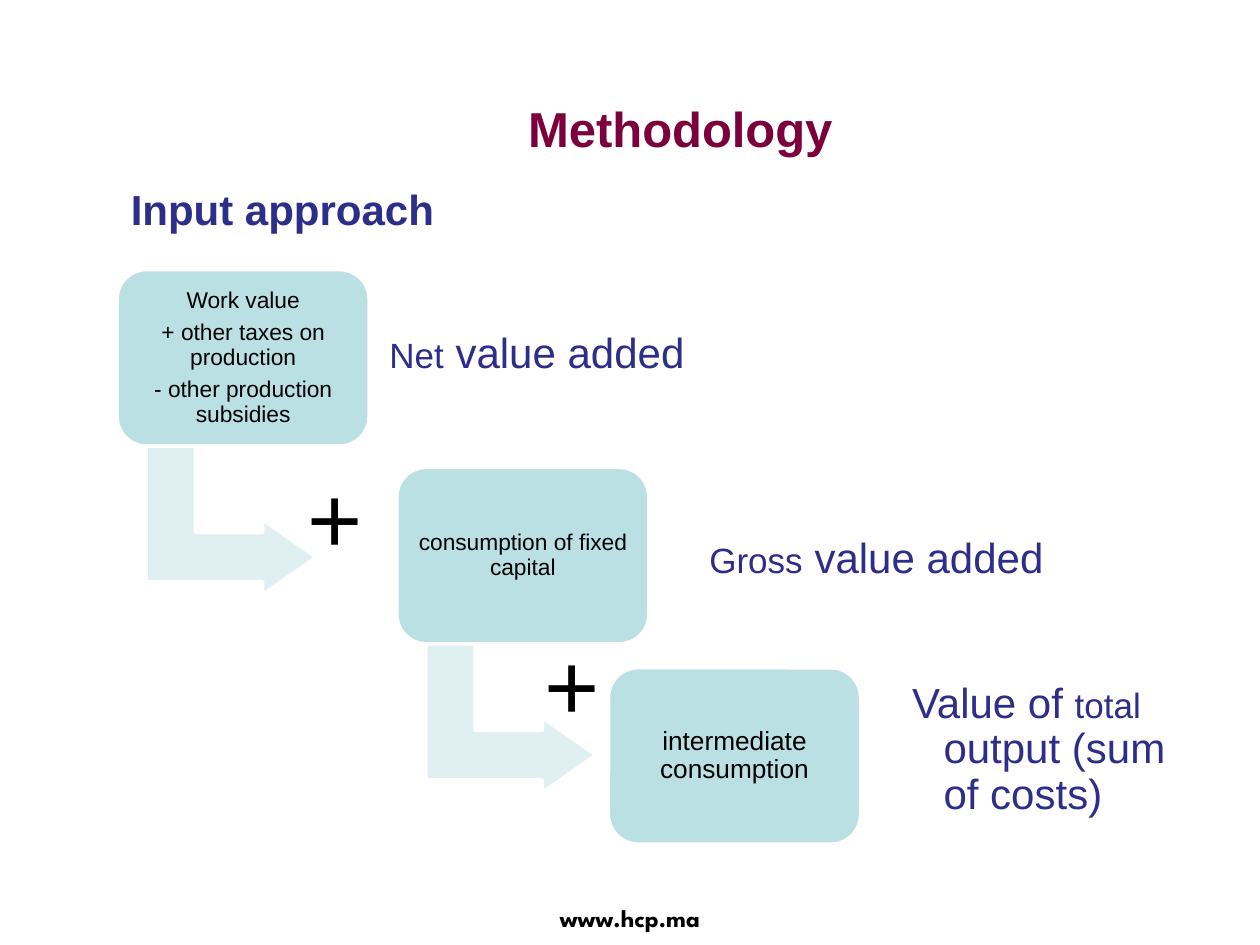
from dataclasses import dataclass

from pptx import Presentation
from pptx import util as u
from pptx.dml import color
from pptx.enum import shapes, text

NAVY, MAROON, BLACK, WHITE = "2D2D8A", "7B003B", "000000", "FFFFFF"
CARD_FILL, ARROW_FILL = "BBE0E3", "E0F0F2"
CARD_WIDTH, CARD_HEIGHT = 2, 1.4


@dataclass
class Step:
    left: float
    top: float
    lines: list[str]
    size: int
    result_box: tuple[float, float, float, float]
    result: list[tuple[str, int]]
    inset: float = 0.08
    leads_on: bool = True


STEPS = [
    Step(0.93, 2.14,
         ["Work value", "+ other taxes on production", "- other production subsidies"],
         13, (3.01, 2.25, 3.82, 1.13), [("Net", 20), (" value added", 24)]),
    Step(3.15, 3.71, ["consumption of fixed capital"],
         13, (5.55, 3.88, 3.45, 1.13), [("Gross", 20), (" value added", 24)]),
    Step(4.83, 5.3, ["intermediate consumption"],
         15, (7.14, 5.39, 2.49, 1.13),
         [("Value of ", 24), ("total", 20), (" output (sum of costs)", 24)],
         inset=0.1, leads_on=False),
]


def rgb(value: str) -> color.RGBColor:
    return color.RGBColor.from_string(value)


def style(font, size: float, fill: str, bold: bool = False, name: str = "Arial") -> None:
    font.name, font.size, font.bold = name, u.Pt(size), bold
    font.color.rgb = rgb(fill)


def set_insets(frame, inset: float) -> None:
    frame.margin_left = frame.margin_right = u.Inches(inset)
    frame.margin_top = frame.margin_bottom = u.Inches(inset)
    frame.vertical_anchor = text.MSO_ANCHOR.MIDDLE


def add_label(page, place: tuple, words: str, size: int, fill: str, bold: bool = False,
              name: str = "Arial", align=text.PP_ALIGN.CENTER,
              anchor=text.MSO_ANCHOR.TOP, wrap: bool = True) -> None:
    frame = page.shapes.add_textbox(*map(u.Inches, place)).text_frame
    frame.word_wrap = wrap
    frame.vertical_anchor = anchor
    para = frame.paragraphs[0]
    para.text, para.alignment = words, align
    style(para.font, size, fill, bold, name)


def add_block(page, kind, place: tuple, fill: str, adjustments: list[float]):
    block = page.shapes.add_shape(kind, *map(u.Inches, place))
    block.shadow.inherit = False
    block.fill.solid()
    block.fill.fore_color.rgb = rgb(fill)
    block.line.color.rgb = rgb(WHITE)
    block.line.width = u.Pt(2)
    for index, value in enumerate(adjustments):
        block.adjustments[index] = value
    return block


def add_card(page, step: Step) -> None:
    place = (step.left, step.top, CARD_WIDTH, CARD_HEIGHT)
    card = add_block(page, shapes.MSO_SHAPE.ROUNDED_RECTANGLE, place, CARD_FILL, [0.167])
    frame = card.text_frame
    frame.word_wrap = True
    set_insets(frame, 0.05)
    for index, line in enumerate(step.lines):
        para = frame.add_paragraph() if index else frame.paragraphs[0]
        para.text, para.alignment = line, text.PP_ALIGN.CENTER
        para.line_spacing = 0.9
        para.space_after = u.Pt(0.35 * step.size)
        style(para.font, step.size, BLACK)


def add_arrow(page, step: Step) -> None:
    place = (step.left + 0.31, step.top + 1.31, 1.19, 1.35)
    arrow = add_block(page, shapes.MSO_SHAPE.BENT_UP_ARROW, place, ARROW_FILL,
                      [0.328, 0.25, 0.358])
    arrow.rotation = 90


def add_result(page, step: Step) -> None:
    frame = page.shapes.add_textbox(*map(u.Inches, step.result_box)).text_frame
    frame.word_wrap = True
    set_insets(frame, step.inset)
    para = frame.paragraphs[0]
    para.line_spacing = 0.9
    para.space_after = u.Pt(3.6)
    properties = para._p.get_or_add_pPr()
    properties.set("marL", str(u.Inches(0.25)))
    properties.set("indent", str(u.Inches(-0.25)))
    for words, size in step.result:
        span = para.add_run()
        span.text = words
        style(span.font, size, NAVY)


def main() -> None:
    deck = Presentation()
    deck.slide_width, deck.slide_height = u.Inches(10), u.Inches(7.5)
    page = deck.slides.add_slide(deck.slide_layouts[6])

    add_label(page, (3.82, 7.12, 2.36, 0.33), "www.hcp.ma", 14, BLACK, True, "League Spartan")
    add_label(page, (1.22, 0.39, 8.36, 1.25), "Methodology", 28, MAROON, True,
              anchor=text.MSO_ANCHOR.MIDDLE)
    for step in STEPS:
        if step.leads_on:
            add_arrow(page, step)
        add_card(page, step)
        add_result(page, step)
    for left, top in [(2.34, 3.59), (4.22, 4.92)]:
        add_label(page, (left, top, 0.64, 1.01), "+", 54, BLACK, wrap=False)
    add_label(page, (0.94, 1.41, 2.97, 0.5), "Input approach", 24, NAVY, True,
              align=text.PP_ALIGN.LEFT)

    deck.save("out.pptx")


if __name__ == "__main__":
    main()
